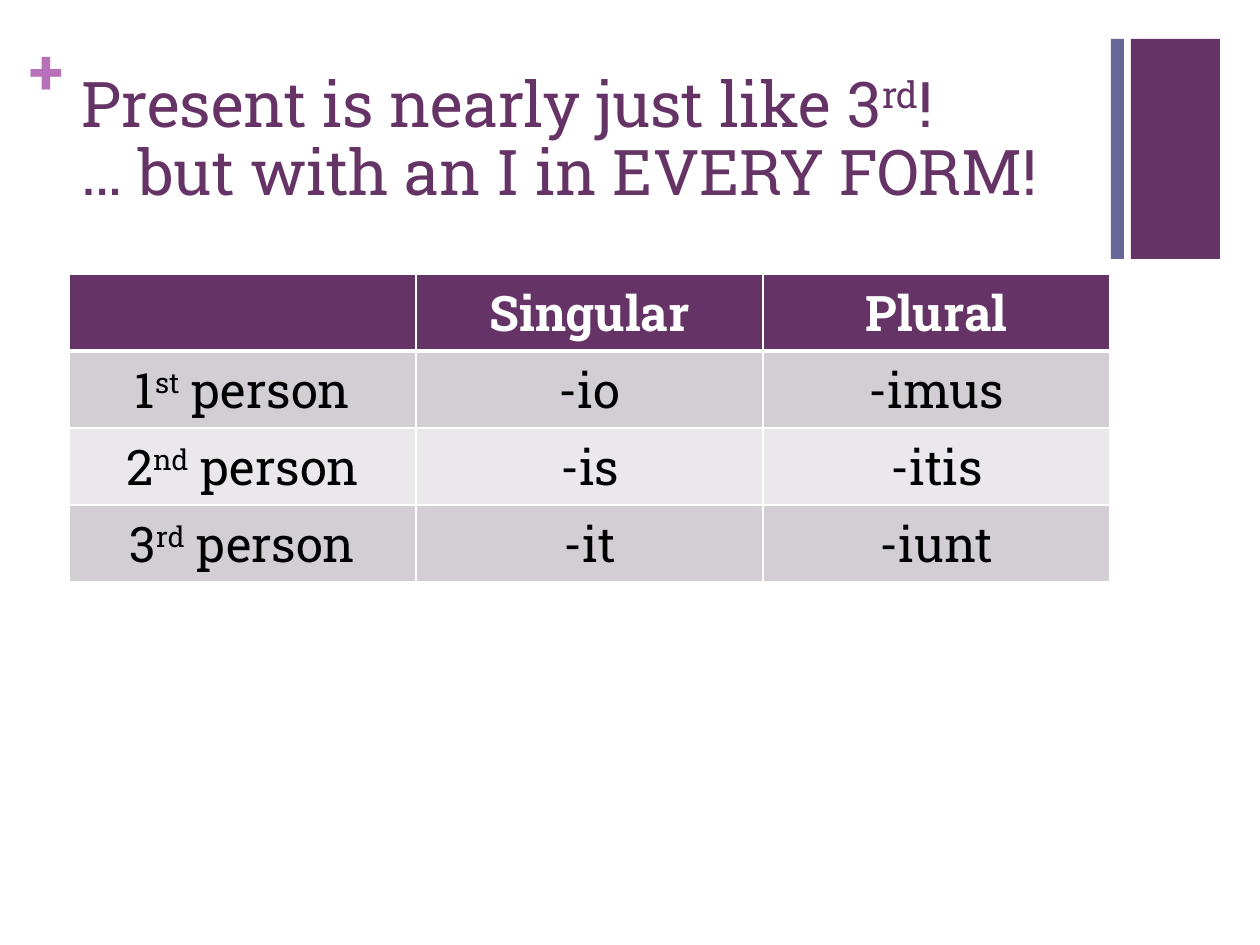
from dataclasses import dataclass

from lxml import etree
from pptx import Presentation
from pptx.dml.color import RGBColor
from pptx.enum.shapes import MSO_SHAPE
from pptx.enum.text import MSO_ANCHOR, PP_ALIGN
from pptx.oxml.ns import qn
from pptx.util import Emu, Pt

RECTANGLE = MSO_SHAPE.RECTANGLE
TOP, MIDDLE = MSO_ANCHOR.TOP, MSO_ANCHOR.MIDDLE
LEFT, CENTER = PP_ALIGN.LEFT, PP_ALIGN.CENTER
PX_PER_INCH = 126
TITLE_ONLY = 5


@dataclass(frozen=True)
class Theme:
    font: str = "Roboto Slab"
    plum: str = "663366"
    slate: str = "666699"
    orchid: str = "B870B8"
    white: str = "FFFFFF"
    black: str = "000000"
    bands: tuple = ("D3CED3", "EAE8EA")
    title_size: int = 36
    table_size: int = 28
    thin_rule: int = 1
    header_rule: int = 3


THEME = Theme()

TITLE_LINES = (
    (("Present is nearly just like 3", False), ("rd", True), ("!", False)),
    (("… but with an I in EVERY FORM!", False),),
)
NUMBERS = ("Singular", "Plural")
ENDINGS = (
    ("1", "st", "-io", "-imus"),
    ("2", "nd", "-is", "-itis"),
    ("3", "rd", "-it", "-iunt"),
)


def px(length):
    return Emu(round(length * 914400 / PX_PER_INCH))


def box_emu(box):
    return [px(length) for length in box]


def add_run(paragraph, text, size, color, bold=False, raised=False):
    run = paragraph.add_run()
    run.text = text
    run.font.name = THEME.font
    run.font.size = Pt(size)
    run.font.bold = bold
    run.font.color.rgb = RGBColor.from_string(color)
    if raised:
        run._r.get_or_add_rPr().set("baseline", "30000")


def add_block(slide, box, color):
    block = slide.shapes.add_shape(RECTANGLE, *box_emu(box))
    block.shadow.inherit = False
    block.fill.solid()
    block.fill.fore_color.rgb = RGBColor.from_string(color)
    block.line.fill.background()


def add_corner_bars(slide, box):
    left, top, width, height = box
    slate_width, gap = 13, 7
    plum_left = slate_width + gap
    add_block(slide, (left + plum_left, top, width - plum_left, height), THEME.plum)
    add_block(slide, (left, top, slate_width, height), THEME.slate)


def add_plus(slide, box):
    frame = slide.shapes.add_textbox(*box_emu(box)).text_frame
    frame.margin_left = frame.margin_right = frame.margin_top = frame.margin_bottom = 0
    frame.word_wrap = True
    add_run(frame.paragraphs[0], "+", THEME.title_size, THEME.orchid, bold=True)


def add_title(slide, box):
    title = slide.shapes.title
    title.left, title.top, title.width, title.height = box_emu(box)
    frame = title.text_frame
    frame.word_wrap = True
    frame.vertical_anchor = TOP
    paragraph = frame.paragraphs[0]
    paragraph.alignment = LEFT
    paragraph.line_spacing = 0.9
    for index, line in enumerate(TITLE_LINES):
        if index:
            paragraph.add_line_break()
        for text, raised in line:
            add_run(paragraph, text, THEME.title_size, THEME.plum, raised=raised)


def set_borders(cell, top, bottom):
    properties = cell._tc.get_or_add_tcPr()
    widths = {"L": THEME.thin_rule, "R": THEME.thin_rule, "T": top, "B": bottom}
    for side, width in widths.items():
        rule = etree.SubElement(properties, qn(f"a:ln{side}"), w=str(Pt(width)))
        fill = etree.SubElement(rule, qn("a:solidFill"))
        etree.SubElement(fill, qn("a:srgbClr"), val=THEME.white)


def fill_cell(cell, row, parts):
    header = row == 0
    set_borders(
        cell,
        THEME.header_rule if row == 1 else THEME.thin_rule,
        THEME.header_rule if header else THEME.thin_rule,
    )
    cell.fill.solid()
    background = THEME.plum if header else THEME.bands[(row - 1) % 2]
    cell.fill.fore_color.rgb = RGBColor.from_string(background)
    paragraph = cell.text_frame.paragraphs[0]
    paragraph.alignment = CENTER
    color = THEME.white if header else THEME.black
    for text, raised in parts:
        add_run(paragraph, text, THEME.table_size, color, bold=header, raised=raised)


def add_endings_table(slide, box):
    rows = [[()] + [((number, False),) for number in NUMBERS]]
    for ordinal, suffix, *endings in ENDINGS:
        person = ((ordinal, False), (suffix, True), (" person", False))
        rows.append([person] + [((ending, False),) for ending in endings])
    table = slide.shapes.add_table(len(rows), len(rows[0]), *box_emu(box)).table
    for row, cells in enumerate(rows):
        for column, parts in enumerate(cells):
            fill_cell(table.cell(row, column), row, parts)


def main():
    presentation = Presentation()
    presentation.slide_width, presentation.slide_height = px(1260), px(945)
    slide = presentation.slides.add_slide(presentation.slide_layouts[TITLE_ONLY])
    add_corner_bars(slide, (1111, 39, 109, 220))
    add_plus(slide, (30, 32, 37, 77))
    add_title(slide, (69, 67, 1041, 154))
    add_endings_table(slide, (69, 274, 1041, 308))
    presentation.save("out.pptx")


if __name__ == "__main__":
    main()
